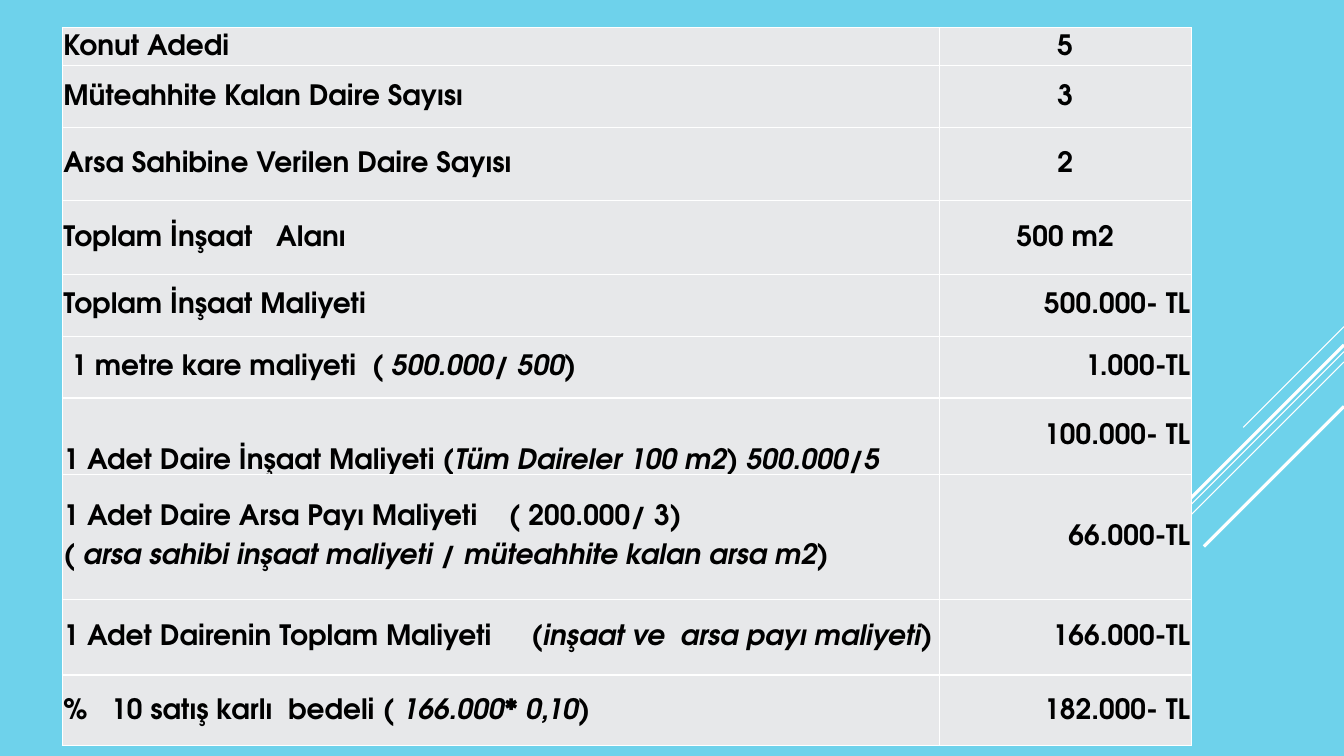
"""Builds a slide with a table of flat construction costs."""
from lxml.etree import SubElement
from pptx import Presentation
from pptx.dml.color import RGBColor
from pptx.enum.shapes import MSO_CONNECTOR
from pptx.enum.text import MSO_ANCHOR, PP_ALIGN
from pptx.oxml.ns import qn
from pptx.util import Cm, Pt

COLOURS = {"background": "6ED2EB", "cell": "E7E8EA", "line": "FFFFFF", "text": "000000"}
FONT = "TeX Gyre Adventor"
SLIDE_WIDTH, SLIDE_HEIGHT = 33.87, 19.05
TABLE_LEFT, TABLE_TOP = 1.57, 0.7
COLUMN_WIDTHS = (22.1, 6.35)
CENTER, RIGHT = PP_ALIGN.CENTER, PP_ALIGN.RIGHT

# Each label is a list of paragraphs; each paragraph alternates upright and italic text.
ROWS = [
    (0.95, [["Konut Adedi"]], "5", CENTER),
    (1.56, [["Müteahhite Kalan Daire Sayısı"]], "3", CENTER),
    (1.85, [["Arsa Sahibine Verilen Daire Sayısı"]], "2", CENTER),
    (1.85, [["Toplam İnşaat   Alanı"]], "500 m2", CENTER),
    (1.56, [["Toplam İnşaat Maliyeti"]], "500.000- TL", RIGHT),
    (1.56, [[" 1 metre kare maliyeti  ", "( 500.000/ 500)"]], "1.000-TL", RIGHT),
    (1.92, [["1 Adet Daire İnşaat Maliyeti (", "Tüm Daireler 100 m2) 500.000/5"]],
     "100.000- TL", RIGHT),
    (3.15, [["1 Adet Daire Arsa Payı Maliyeti    ( 200.000/ 3)"],
            ["", "( arsa sahibi inşaat maliyeti / müteahhite kalan arsa m2)"]],
     "66.000-TL", RIGHT),
    (1.91, [["1 Adet Dairenin Toplam Maliyeti     ", "(inşaat ve  arsa payı maliyeti", ")"]],
     "166.000-TL", RIGHT),
    (1.78, [["%   10 satış karlı  bedeli ", "( 166.000* 0,10)"]], "182.000- TL", RIGHT),
]
BOTTOM_ANCHORED_ROW = 6

DIAGONALS = [
    (8.23, 2.54, 0.75),
    (8.86, 8.28, 0.75),
    (9.12, 5.26, 0.75),
    (8.69, 4.85, 2.25),
    (10.24, 3.53, 2.25),
]


def colour(name):
    return RGBColor.from_string(COLOURS[name])


def add_diagonal(page, top, reach, weight):
    line = page.shapes.add_connector(
        MSO_CONNECTOR.STRAIGHT, Cm(SLIDE_WIDTH), Cm(top),
        Cm(SLIDE_WIDTH - reach), Cm(top + reach))
    line.line.color.rgb = colour("line")
    line.line.width = Pt(weight)
    SubElement(line._element.spPr, qn("a:effectLst"))


def style_cell(cell, anchor):
    cell.margin_left = cell.margin_right = Cm(0.03)
    cell.margin_top = cell.margin_bottom = 0
    cell.vertical_anchor = anchor
    properties = cell._tc.get_or_add_tcPr()
    for side in ("a:lnL", "a:lnR", "a:lnT", "a:lnB"):
        border = SubElement(properties, qn(side), w=str(Pt(1)))
        fill = SubElement(border, qn("a:solidFill"))
        SubElement(fill, qn("a:srgbClr"), val=COLOURS["line"])
    cell.fill.solid()
    cell.fill.fore_color.rgb = colour("cell")


def write_cell(cell, paragraphs, alignment):
    frame = cell.text_frame
    for number, parts in enumerate(paragraphs):
        para = frame.add_paragraph() if number else frame.paragraphs[0]
        para.alignment = alignment
        para.line_spacing = 1.07
        para.space_after = Pt(8)
        para.font.name = FONT
        para.font.size = Pt(20)
        para.font.bold = True
        para.font.color.rgb = colour("text")
        for index, text in enumerate(parts):
            if text:
                span = para.add_run()
                span.text = text
                span.font.italic = index % 2 == 1


def add_cost_table(page):
    frame = page.shapes.add_table(
        len(ROWS), len(COLUMN_WIDTHS), Cm(TABLE_LEFT), Cm(TABLE_TOP),
        Cm(sum(COLUMN_WIDTHS)), Cm(sum(row[0] for row in ROWS)))
    table = frame.table
    table.first_row = table.horz_banding = False
    for column, width in zip(table.columns, COLUMN_WIDTHS):
        column.width = Cm(width)
    for number, (height, label, value, alignment) in enumerate(ROWS):
        table.rows[number].height = Cm(height)
        label_cell, value_cell = table.cell(number, 0), table.cell(number, 1)
        at_bottom = number == BOTTOM_ANCHORED_ROW
        style_cell(label_cell, MSO_ANCHOR.BOTTOM if at_bottom else MSO_ANCHOR.MIDDLE)
        style_cell(value_cell, MSO_ANCHOR.MIDDLE)
        write_cell(label_cell, label, PP_ALIGN.LEFT)
        write_cell(value_cell, [[value]], alignment)


def main():
    deck = Presentation()
    deck.slide_width, deck.slide_height = Cm(SLIDE_WIDTH), Cm(SLIDE_HEIGHT)
    page = deck.slides.add_slide(deck.slide_layouts[6])
    page.background.fill.solid()
    page.background.fill.fore_color.rgb = colour("background")
    for top, reach, weight in DIAGONALS:
        add_diagonal(page, top, reach, weight)
    add_cost_table(page)
    deck.save("out.pptx")


if __name__ == "__main__":
    main()
